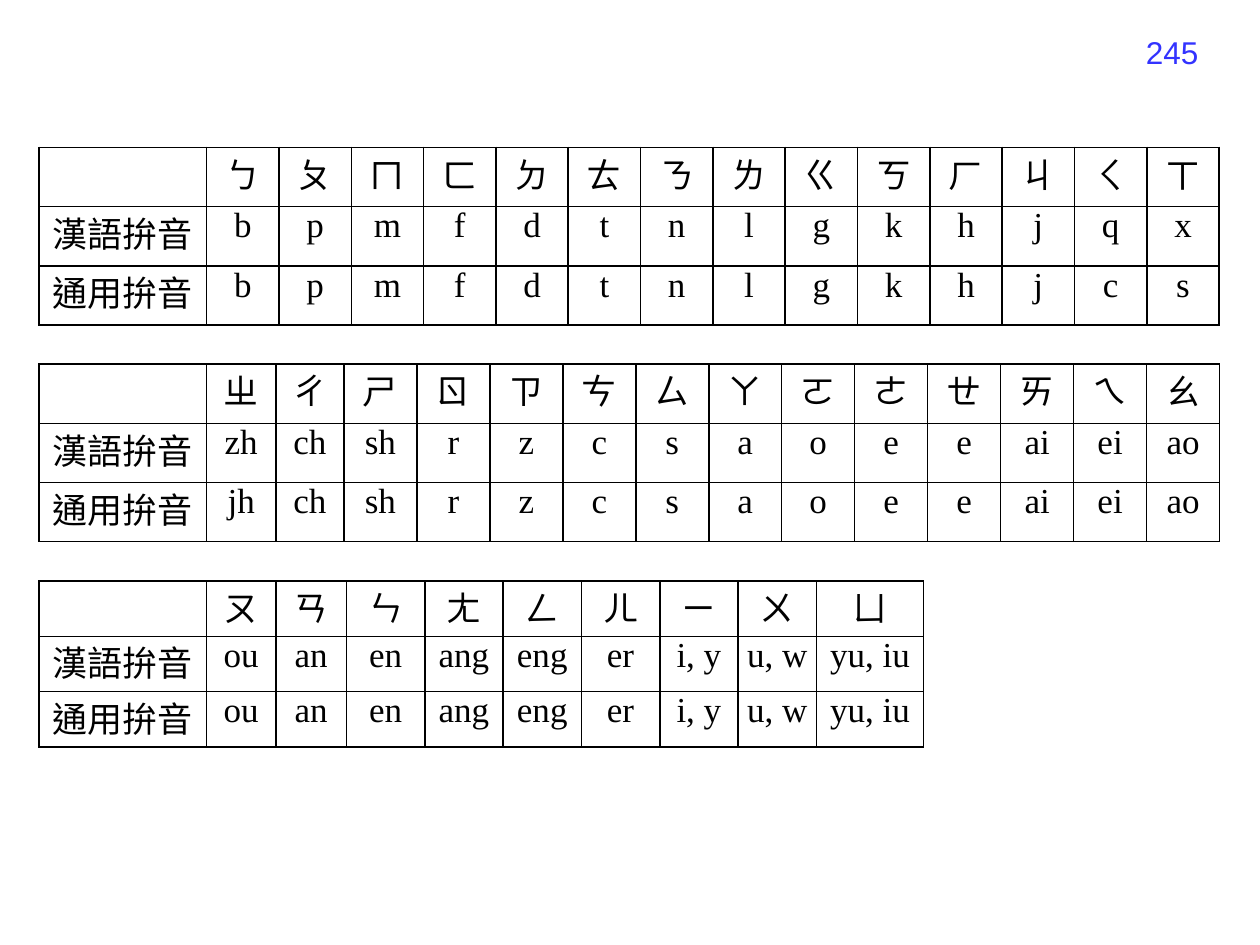
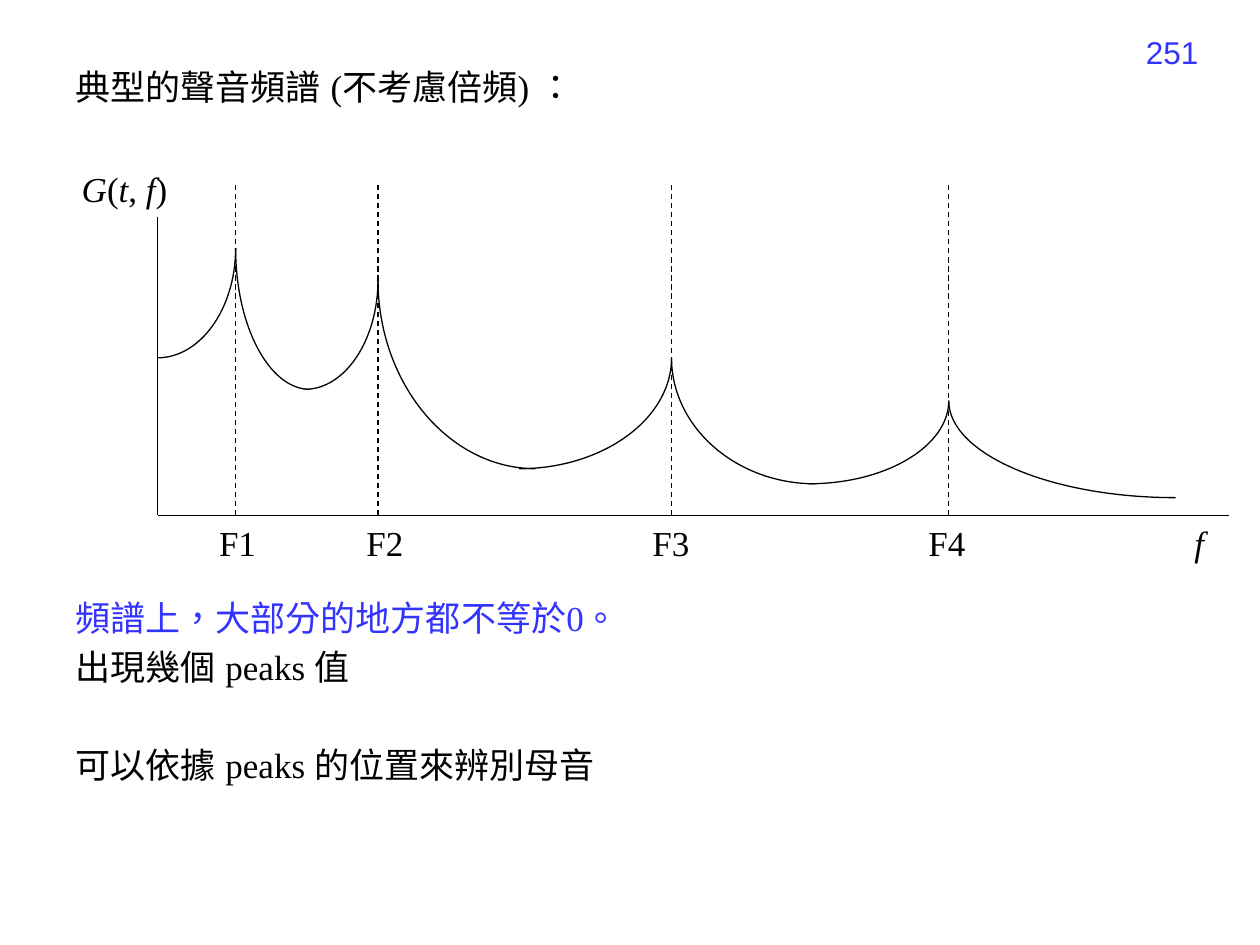
from dataclasses import dataclass
from itertools import groupby

from lxml.etree import SubElement
from pptx import Presentation
from pptx.dml.color import RGBColor
from pptx.enum.dml import MSO_LINE
from pptx.enum.shapes import MSO_CONNECTOR
from pptx.enum.text import PP_ALIGN
from pptx.oxml.ns import qn
from pptx.util import Inches, Pt


@dataclass(frozen=True)
class Theme:
    ink: RGBColor = RGBColor(0x00, 0x00, 0x00)
    accent: RGBColor = RGBColor(0x33, 0x33, 0xFF)
    serif: str = "Times New Roman"
    sans: str = "Arial"
    chinese: str = "Noto Sans CJK SC"
    text_size: float = 20
    number_size: float = 18
    line_gap: float = 4
    section_gap: float = 32
    chart_gap: float = 279.7
    line_width: float = 0.75
    border_width: float = 1


class SlideWriter:
    """Draws on the current slide, measuring in a grid of 10 columns by 7.5 rows."""

    COLUMNS, ROWS = 10, 7.5
    ARC_HANDLE = 0.55  # handle length of a cubic curve that follows a quarter ellipse

    def __init__(self, presentation, theme):
        self.presentation = presentation
        self.theme = theme
        self.slide = None

    def x(self, columns):
        return round(self.presentation.slide_width * columns / self.COLUMNS)

    def y(self, rows):
        return round(self.presentation.slide_height * rows / self.ROWS)

    def new_slide(self, number):
        layout = self.presentation.slide_layouts[6]
        self.slide = self.presentation.slides.add_slide(layout)
        frame = self.text_frame(7.28, 0.21, 2.33, 0.52)
        paragraph = frame.paragraphs[0]
        paragraph.text = str(number)
        paragraph.alignment = PP_ALIGN.RIGHT
        self.style(paragraph, self.theme.sans, size=self.theme.number_size,
                   color=self.theme.accent)

    def style(self, paragraph, name=None, east_asian=None, size=None, color=None):
        font = paragraph.font
        font.size = Pt(size or self.theme.text_size)
        font.color.rgb = color or self.theme.ink
        font.name = name or self.theme.serif
        properties = font._element
        properties.set("lang", "zh-TW")
        SubElement(properties, qn("a:ea"), typeface=east_asian or self.theme.sans)

    def text_frame(self, left, top, width, height, wrap=True):
        box = self.slide.shapes.add_textbox(
            self.x(left), self.y(top), self.x(width), self.y(height))
        box.text_frame.word_wrap = wrap
        return box.text_frame

    def paragraphs(self, left, top, width, height, lines):
        """Write lines of (text, colour, points of space before)."""
        frame = self.text_frame(left, top, width, height)
        for index, (text, color, gap) in enumerate(lines):
            paragraph = frame.add_paragraph() if index else frame.paragraphs[0]
            paragraph.text = text
            paragraph.space_before = Pt(gap)
            self.style(paragraph, color=color)

    def label(self, left, top, width, text, italic_letters=""):
        frame = self.text_frame(left, top, width, 0.44, wrap=False)
        paragraph = frame.paragraphs[0]
        self.style(paragraph)
        for italic, letters in groupby(text, lambda letter: letter in italic_letters):
            run = paragraph.add_run()
            run.text = "".join(letters)
            run.font.italic = italic

    def line(self, start, end, dashed=False):
        connector = self.slide.shapes.add_connector(
            MSO_CONNECTOR.STRAIGHT, self.x(start[0]), self.y(start[1]),
            self.x(end[0]), self.y(end[1]))
        self.outline(connector.line)
        if dashed:
            connector.line.dash_style = MSO_LINE.DASH
        SubElement(connector._element.spPr, qn("a:effectLst"))

    def outline(self, line):
        line.color.rgb = self.theme.ink
        line.width = Pt(self.theme.line_width)

    def quarter_ellipse(self, valley, peak):
        """Draw one cubic curve from a flat valley to an upright peak."""
        start_x, start_y = self.x(valley[0]), self.y(valley[1])
        end_x, end_y = self.x(peak[0]), self.y(peak[1])
        builder = self.slide.shapes.build_freeform(start_x, start_y)
        builder.add_line_segments([(end_x, end_y)], close=False)
        shape = builder.convert_to_shape()
        shape.shadow.inherit = False
        shape.fill.background()
        self.outline(shape.line)

        segment = next(shape._element.iter(qn("a:lnTo")))
        segment.tag = qn("a:cubicBezTo")
        segment.remove(segment[0])
        handles = [(start_x + self.ARC_HANDLE * (end_x - start_x), start_y),
                   (end_x, end_y + self.ARC_HANDLE * (start_y - end_y)),
                   (end_x, end_y)]
        for x, y in handles:
            SubElement(segment, qn("a:pt"), x=str(round(x - shape.left)),
                       y=str(round(y - shape.top)))

    def table(self, left, top, widths, row_height, rows, side_margin):
        shape = self.slide.shapes.add_table(
            len(rows), len(widths), self.x(left), self.y(top),
            self.x(sum(widths)), self.y(row_height * len(rows)))
        table = shape.table
        table.first_row = table.horz_banding = False
        for column, width in zip(table.columns, widths):
            column.width = self.x(width)
        for row, texts in zip(table.rows, rows):
            row.height = self.y(row_height)
            for cell, text in zip(row.cells, texts):
                self.fill_cell(cell, text, side_margin)

    def fill_cell(self, cell, text, side_margin):
        cell.margin_left = cell.margin_right = self.x(side_margin)
        cell.margin_top = cell.margin_bottom = 0
        paragraph = cell.text_frame.paragraphs[0]
        paragraph.text = text
        paragraph.alignment = PP_ALIGN.CENTER
        self.style(paragraph, east_asian=self.theme.chinese)
        properties = cell._tc.get_or_add_tcPr()
        for side in ("lnL", "lnR", "lnT", "lnB"):
            border = SubElement(properties, qn(f"a:{side}"),
                                w=str(Pt(self.theme.border_width)))
            fill = SubElement(border, qn("a:solidFill"))
            SubElement(fill, qn("a:srgbClr"), val=str(self.theme.ink))
        cell.fill.background()


def spread(total, first, count, last=()):
    """Share what the first and last widths leave among count equal columns."""
    equal = (total - sum(first) - sum(last)) / count
    return [*first, *[equal] * count, *last]


def phonetic_slide(writer):
    writer.new_slide(245)
    label_width = 1.33
    # top, row height, side margin, widths, then zhuyin, Hanyu and Tongyong spellings
    tables = [
        (1.17, 0.47, 0.05, spread(9.37, [label_width], 14),
         "ㄅ ㄆ ㄇ ㄈ ㄉ ㄊ ㄋ ㄌ ㄍ ㄎ ㄏ ㄐ ㄑ ㄒ",
         "b p m f d t n l g k h j q x",
         "b p m f d t n l g k h j c s"),
        (2.89, 0.47, 0.05, spread(9.37, [label_width, 0.55, 0.54], 12),
         "ㄓ ㄔ ㄕ ㄖ ㄗ ㄘ ㄙ ㄚ ㄛ ㄜ ㄝ ㄞ ㄟ ㄠ",
         "zh ch sh r z c s a o e e ai ei ao",
         "jh ch sh r z c s a o e e ai ei ao"),
        (4.61, 0.44, 0.07, spread(7.02, [label_width, 0.55, 0.56], 6, [0.85]),
         "ㄡ ㄢ ㄣ ㄤ ㄥ ㄦ ㄧ ㄨ ㄩ",
         "ou an en ang eng er i,y u,w yu,iu",
         "ou an en ang eng er i,y u,w yu,iu"),
    ]
    row_labels = ("", "漢語拚音", "通用拚音")
    for top, row_height, margin, widths, *spellings in tables:
        rows = [[label, *(sound.replace(",", ", ") for sound in sounds.split())]
                for label, sounds in zip(row_labels, spellings)]
        writer.table(0.31, top, widths, row_height, rows, margin)


def spectrum_slide(writer):
    theme = writer.theme
    writer.new_slide(251)
    writer.paragraphs(0.5, 0.47, 8.95, 6.56, [
        ("典型的聲音頻譜 (不考慮倍頻) ：", theme.ink, 0),
        ("頻譜上，大部分的地方都不等於0。", theme.accent, theme.chart_gap),
        ("出現幾個 peaks 值", theme.ink, theme.line_gap),
        ("可以依據 peaks 的位置來辨別母音", theme.ink, theme.section_gap),
    ])

    origin = axis_left, axis_bottom = 1.25, 4.09
    writer.label(0.55, 1.28, 0.89, "G(t, f)", italic_letters="Gtf")
    writer.label(9.38, axis_bottom, 0.28, "f", italic_letters="f")
    writer.line((axis_left, 1.72), origin)
    writer.line(origin, (9.75, axis_bottom))

    # name, label left, peak, valley before, valley after
    formants = [
        ("F1", 1.64, (1.87, 1.97), (axis_left, 2.84), (2.46, 3.09)),
        ("F2", 2.81, (3.00, 2.22), (2.42, 3.09), (4.25, 3.72)),
        ("F3", 5.08, (5.33, 2.84), (4.12, 3.72), (6.47, 3.84)),
        ("F4", 7.27, (7.53, 3.18), (6.42, 3.84), (9.33, 3.95)),
    ]
    for name, label_left, peak, *valleys in formants:
        for valley in valleys:
            writer.quarter_ellipse(valley, peak)
        writer.line((peak[0], axis_bottom), (peak[0], 1.47), dashed=True)
        writer.label(label_left, axis_bottom, 0.5, name)


def main():
    presentation = Presentation()
    presentation.slide_width = Inches(10)
    presentation.slide_height = Inches(7.5)
    writer = SlideWriter(presentation, Theme())
    phonetic_slide(writer)
    spectrum_slide(writer)
    presentation.save("out.pptx")


if __name__ == "__main__":
    main()
